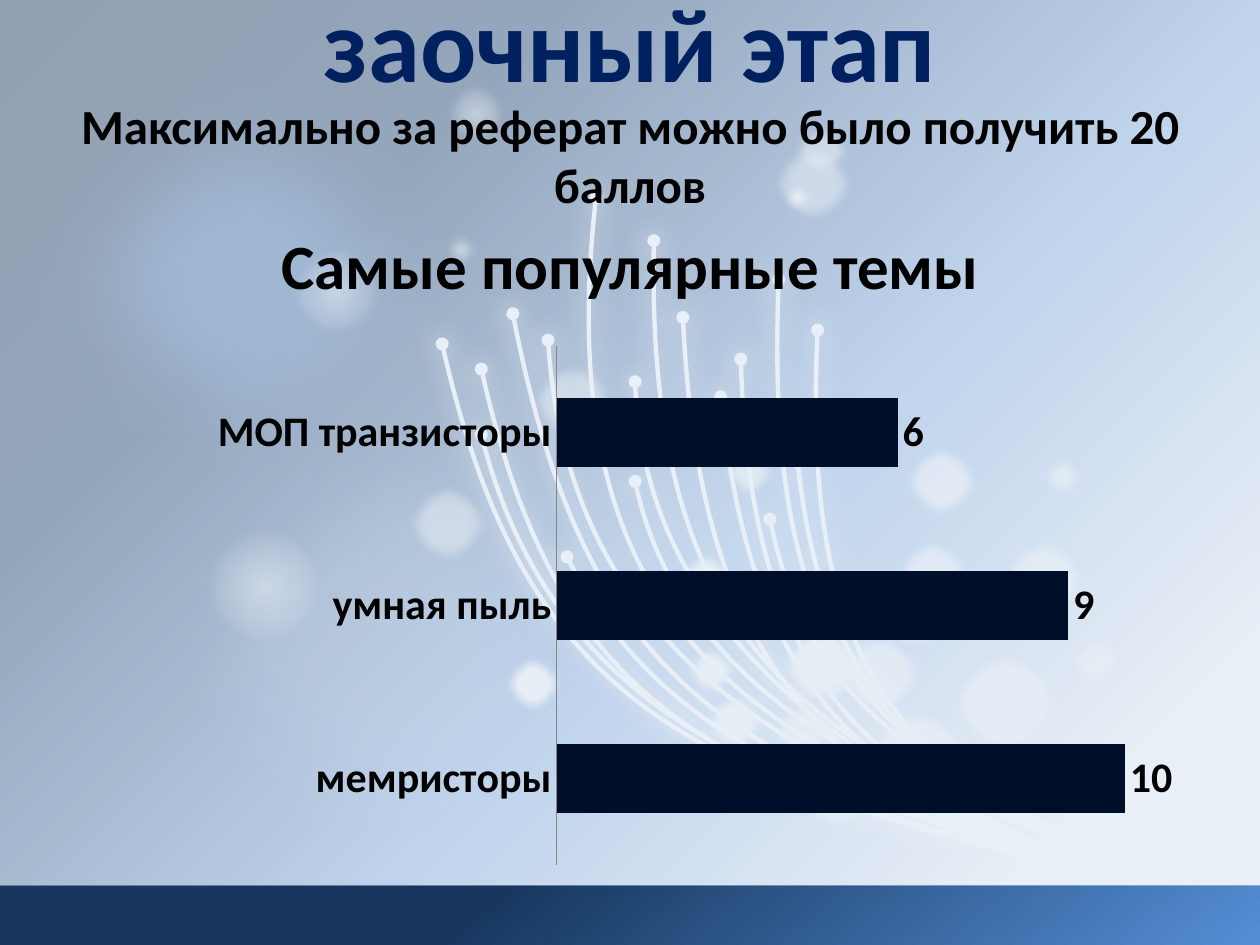
from dataclasses import dataclass

from lxml.etree import SubElement
from pptx import Presentation
from pptx.chart.data import CategoryChartData
from pptx.dml.color import RGBColor
from pptx.enum.chart import XL_CHART_TYPE, XL_LABEL_POSITION, XL_TICK_MARK
from pptx.enum.shapes import MSO_SHAPE
from pptx.enum.text import MSO_ANCHOR, MSO_AUTO_SIZE, PP_ALIGN
from pptx.oxml.ns import qn
from pptx.util import Inches, Pt


@dataclass(frozen=True)
class Theme:
    """Colours, gradients and type sizes of the slide."""
    font: str = "Calibri"
    title: str = "002060"
    title_edge: str = "FCFCFD"
    text: str = "000000"
    bar: str = "000E2A"
    axis: str = "868686"
    white: str = "FFFFFF"
    halo: tuple = (("C6D9F1", 22),)
    blue_halo: tuple = (("558ED5", 53),)
    veil: tuple = (("DCE6F2", 64),)
    dot: tuple = (("FFFFFF", 75),)
    glow: tuple = (("FFFFFF", 100, 31), ("FFFFFF", 0, 100))
    faint: tuple = (("FFFFFF", 55, 31), ("FFFFFF", 0, 100))
    mist: tuple = (("FFFFFF", 55, 0), ("FFFFFF", 0, 62))
    sky: tuple = (("FFFFFF", 100, 14), ("8EB4E3", 100, 42),
                  ("17375E", 100, 74), ("0F243E", 100, 100))
    band: tuple = (("558ED5", 100, 0), ("17375E", 100, 62))
    title_size: int = 60
    heading_size: int = 36
    lead_size: int = 28
    chart_size: int = 24


T = Theme()

HALOS = [
    (T.halo, 50, [(1.07, 3.07, 4.12, 4.12)]),
    (T.faint, 5, [(3.21, 3.82, .69, .67), (4.2, 2.85, .69, .67)]),
    (T.halo, 50, [(6.26, .3, 2.21, 2.17), (4.27, 0, 2.21, 2.17)]),
    (T.blue_halo, 50, [(0, .37, 3.89, 3.67)]),
]
FIBRES = [
    (4.07, 2.49, 4.73, 5.88, 6.15, 6.18, 9.76, 7.18),
    (5.19, 1.91, 5.11, 5.66, 6.86, 6.06, 9.77, 7.19),
    (6.18, 2.22, 6.05, 5.56, 7.1, 6.13, 9.77, 7.19),
    (5.04, 3.03, 5.1, 4.74, 6.36, 6.16, 9.46, 7.19),
    (3.51, 2.73, 4.24, 5.96, 5.8, 6.24, 9.77, 7.19),
    (3.82, 2.93, 4.51, 6.01, 5.99, 6.28, 9.77, 7.19),
    (6.49, 2.62, 6.34, 5.55, 7.29, 6.28, 9.62, 7.19),
    (5.42, 2.52, 5.56, 5.45, 6.64, 6.32, 9.16, 7.19),
    (4.73, 1.57, 4.26, 5.72, 6.79, 6.02, 9.31, 7.19),
    (5.88, 2.85, 5.96, 5.63, 7.02, 6.34, 9.54, 7.19),
    (5.72, 3.15, 6.03, 6.16, 7.4, 6.4, 9.92, 7.34),
    (6.33, 3.67, 6.54, 5.58, 7.4, 6.4, 9.92, 7.34),
    (3.82, 3.45, 4.57, 6.42, 7.4, 6.4, 9.92, 7.34),
    (4.35, 2.7, 4.55, 5.88, 7.4, 6.4, 9.92, 7.34),
    (5.04, 3.82, 5.43, 5.68, 7.4, 6.4, 9.92, 7.34),
    (4.5, 4.42, 5.48, 6.35, 7.4, 6.4, 9.92, 7.34),
    (6.11, 4.12, 6.4, 5.51, 7.17, 6.17, 9.69, 7.12),
]
LIGHTS = [
    (T.dot, 5, [(7.56, 5.17, .84, .82), (8.47, 5.02, .46, .45), (6.95, 4.57, .61, .6),
                (7.94, 4.27, .69, .67), (8.24, 3.6, .38, .37), (7.1, 4.27, .61, .6),
                (7.17, 3.52, .61, .6)]),
    (T.glow, 5, [(6.18, 4.95, .69, .67), (5.57, 5.47, .53, .52), (5.34, 4.35, .53, .52),
                 (4.5, 4.72, .46, .45), (3.97, 5.17, .53, .52), (6.26, 5.85, .76, .75),
                 (5.04, 5.85, .53, .52), (5.42, 5.1, .46, .45), (6.18, 1.42, .31, .3)]),
    (T.faint, 5, [(6.11, 1.12, .69, .67), (6.26, .97, .53, .45)]),
    (T.dot, 5, [(5.72, 3.52, .46, .45), (6.64, 5.02, .69, .67), (6.11, 5.55, .53, .52),
                (5.8, 5.99, .53, .52), (6.87, 5.62, .84, .82)]),
    (T.mist, 5, [(2.21, 1.87, .92, .9), (3.43, .6, .69, .6), (3.43, 1.8, .46, .37),
                 (1.53, 4.05, 1.14, 1.2)]),
]


def rgb(color):
    """Turn a hex string into a colour."""
    return RGBColor.from_string(color)


def add_color(parent, color, opacity=100):
    """Append a colour with its opacity in percent."""
    clr = SubElement(parent, qn("a:srgbClr"), val=color)
    if opacity < 100:
        SubElement(clr, qn("a:alpha"), val=str(opacity * 1000))


def paint(fill, props, stops, center=(50, 50, 50, 50), angle=None):
    """Fill with one translucent colour or with a gradient."""
    fill.solid()
    solid = props.find(qn("a:solidFill"))
    if len(stops) == 1:
        add_color(solid, *stops[0])
        return
    grad = props.makeelement(qn("a:gradFill"), {"rotWithShape": "1"})
    gs_lst = SubElement(grad, qn("a:gsLst"))
    for color, opacity, pos in stops:
        add_color(SubElement(gs_lst, qn("a:gs"), pos=str(pos * 1000)), color, opacity)
    if angle is None:
        path = SubElement(grad, qn("a:path"), {"path": "circle"})
        SubElement(path, qn("a:fillToRect"),
                   {side: str(v * 1000) for side, v in zip("ltrb", center)})
    else:
        SubElement(grad, qn("a:lin"), ang=str(angle * 60000), scaled="0")
    props.replace(solid, grad)


def add_effect(sp, name, **attrs):
    """Give a shape one effect in place of the inherited ones."""
    sp.shadow.inherit = False
    return SubElement(sp.element.spPr.find(qn("a:effectLst")), qn(name), attrs)


def add_lights(shapes, left, top, groups):
    """Draw soft ellipses, group by group."""
    for stops, soft, boxes in groups:
        for x, y, w, h in boxes:
            sp = shapes.add_shape(MSO_SHAPE.OVAL, left + Inches(x), top + Inches(y),
                                  Inches(w), Inches(h))
            paint(sp.fill, sp.element.spPr, stops)
            sp.line.fill.background()
            add_effect(sp, "a:softEdge", rad=str(Pt(soft)))


def add_fibre(shapes, left, top, coords):
    """Draw one glowing Bézier fibre with a round tip."""
    pts = [(left + Inches(x), top + Inches(y)) for x, y in zip(coords[::2], coords[1::2])]
    builder = shapes.build_freeform(*pts[0])
    builder.add_line_segments(pts[1:], close=False)
    sp = builder.convert_to_shape()
    path = next(sp.element.iter(qn("a:path")))
    segments = path.findall(qn("a:lnTo"))
    curve = SubElement(path, qn("a:cubicBezTo"))
    for segment in segments:
        curve.append(segment[0])
        path.remove(segment)
    sp.fill.background()
    sp.line.color.rgb = rgb(T.white)
    sp.line.width = Pt(2.5)
    SubElement(sp.element.spPr.find(qn("a:ln")), qn("a:headEnd"), type="oval")
    add_color(add_effect(sp, "a:outerShdw", blurRad=str(Pt(14)), dist="0"), T.white)


def add_backdrop(s, left, top, width, height):
    """Place the sky, the fibres with their lights and the bottom band."""
    paint(s.background.fill, next(s.element.iter(qn("p:bgPr"))), T.sky, (100, 100, 0, 0))
    shapes = s.shapes.add_group_shape().shapes
    add_lights(shapes, left, top, HALOS)
    for coords in FIBRES:
        add_fibre(shapes, left, top, coords)
    add_lights(shapes, left, top, LIGHTS)
    band_h = Inches(.47)
    sp = s.shapes.add_shape(MSO_SHAPE.RECTANGLE, left, top + height - band_h, width, band_h)
    paint(sp.fill, sp.element.spPr, T.band, angle=230)
    sp.line.fill.background()
    sp.shadow.inherit = False


def place_text(sp, box, lines, color, inset):
    """Bring a placeholder to the front and set its centred bold lines."""
    sp.element.getparent().append(sp.element)
    sp.left, sp.top, sp.width, sp.height = box
    tf = sp.text_frame
    tf.text = "\n".join(text for text, size in lines)
    tf.word_wrap = True
    tf.auto_size = MSO_AUTO_SIZE.NONE
    tf.vertical_anchor = MSO_ANCHOR.TOP
    tf.margin_top = inset
    for p, (text, size) in zip(tf.paragraphs, lines):
        p.alignment = PP_ALIGN.CENTER
        pPr = p._p.get_or_add_pPr()
        pPr.set("marL", "0")
        pPr.set("indent", "0")
        p.space_before = Pt(size * .2) if p._p is not tf.paragraphs[0]._p else Pt(0)
        SubElement(pPr, qn("a:buNone"))
        font = p.runs[0].font
        font.name, font.size, font.bold = T.font, Pt(size), True
        font.color.rgb = rgb(color)


def add_body(s, left, top, width, height):
    """Lay the pale veil with the two headings over the backdrop."""
    body = s.placeholders[1]
    lines = [("Максимально за реферат можно было получить 20 баллов", T.lead_size),
             ("Самые популярные темы", T.heading_size)]
    place_text(body, (left, top, width, height), lines, T.text, Inches(.76))
    paint(body.fill, body.element.spPr, T.veil)


def add_topics_chart(s, left, top, width, height):
    """Add the bar chart of the most popular topics."""
    data = CategoryChartData()
    data.categories = ["мемристоры", "умная пыль", "МОП транзисторы"]
    data.add_series("Series 1", (10, 9, 6))
    chart = s.shapes.add_chart(XL_CHART_TYPE.BAR_CLUSTERED, left, top, width, height, data).chart
    chart.has_legend = chart.has_title = False
    chart.font.name, chart.font.size, chart.font.bold = T.font, Pt(T.chart_size), True
    chart.font.color.rgb = rgb(T.text)
    value, category = chart.value_axis, chart.category_axis
    value.visible = value.has_major_gridlines = False
    value.minimum_scale, value.maximum_scale = 0, 12
    category.major_tick_mark = XL_TICK_MARK.NONE
    category.format.line.color.rgb = rgb(T.axis)
    plot = chart.plots[0]
    plot.gap_width, plot.overlap, plot.vary_by_categories = 150, -25, False
    plot.has_data_labels = True
    plot.data_labels.show_value = True
    plot.data_labels.position = XL_LABEL_POSITION.OUTSIDE_END
    fill = plot.series[0].format.fill
    fill.solid()
    fill.fore_color.rgb = rgb(T.bar)


def add_title(s, left, top, width, height):
    """Set the slide title with its thin light edge."""
    title = s.shapes.title
    place_text(title, (left, top, width, height), [("заочный этап", T.title_size)],
               T.title, Inches(.05))
    rPr = title.text_frame.paragraphs[0].runs[0].font._element
    ln = rPr.makeelement(qn("a:ln"), {"w": str(Pt(1.4))})
    add_color(SubElement(ln, qn("a:solidFill")), T.title_edge)
    rPr.insert(0, ln)


def main():
    """Build and save the slide."""
    prs = Presentation()
    prs.slide_width, prs.slide_height = Inches(10), Inches(7.5)
    s = prs.slides.add_slide(prs.slide_layouts[1])
    add_backdrop(s, 0, 0, prs.slide_width, prs.slide_height)
    add_body(s, 0, 0, prs.slide_width, Inches(7.03))
    add_topics_chart(s, Inches(1.56), Inches(2.66), Inches(8.44), Inches(4.29))
    add_title(s, 0, Inches(-.23), prs.slide_width, Inches(1.11))
    prs.save("out.pptx")


if __name__ == "__main__":
    main()
